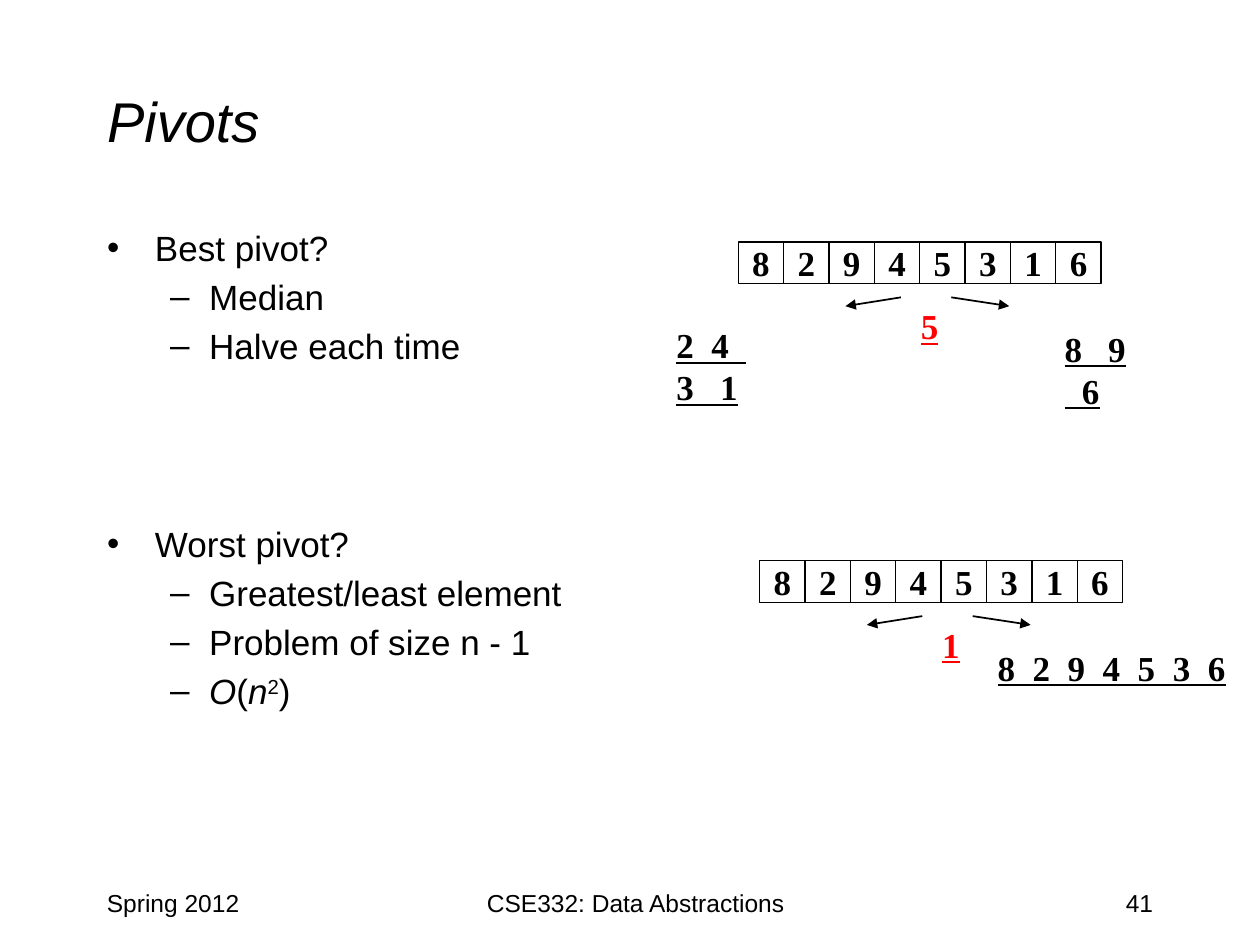
from lxml.etree import SubElement
from pptx import Presentation
from pptx.dml.color import RGBColor
from pptx.enum.shapes import MSO_CONNECTOR as Connector, MSO_SHAPE as Shape
from pptx.enum.text import MSO_ANCHOR as Anchor, MSO_AUTO_SIZE as AutoSize, PP_ALIGN as Align
from pptx.oxml.ns import qn
from pptx.util import Inches, Pt

COLORS = {"ink": "000000", "pivot": "FF0000"}
BODY = {"name": "Arial", "size": Pt(20)}
DIGITS = {"name": "Times New Roman", "size": Pt(20), "bold": True}
UNDERLINED = {**DIGITS, "underline": True}
FOOTER = {"name": "Arial", "size": Pt(14)}
VALUES = "82945316"
CELL_WIDTH, CELL_HEIGHT = 0.36, 0.33
INDENTS = [(0.38, -0.38), (0.81, -0.31)]
OUTLINE = [
    (0, "Best pivot?"),
    (1, "Median"),
    (1, "Halve each time"),
    (0, "Worst pivot?"),
    (1, "Greatest/least element"),
    (1, "Problem of size n - 1"),
]
COMPLEXITY = [("O", True, 0), ("(", False, 0), ("n", True, 0), ("2", False, 30000), (")", False, 0)]


def color(name):
    """Return a named colour of the palette."""
    return RGBColor.from_string(COLORS[name])


def place(shape, left, top, width, height):
    """Move and size a shape, in inches."""
    bounds = {"left": left, "top": top, "width": width, "height": height}
    for name, value in bounds.items():
        setattr(shape, name, Inches(value))


def add_span(para, text, style, ink="ink"):
    """Append a formatted run to a paragraph."""
    span = para.add_run()
    span.text = text
    for name, value in style.items():
        setattr(span.font, name, value)
    span.font.color.rgb = color(ink)
    return span


def add_text(page, bounds, text, style, ink="ink", align=Align.LEFT):
    """Add a wrapping text box with one paragraph."""
    box = page.shapes.add_textbox(*map(Inches, bounds))
    box.text_frame.word_wrap = True
    para = box.text_frame.paragraphs[0]
    para.alignment = align
    add_span(para, text, style, ink)


def add_title(page, text):
    """Fill the title placeholder."""
    title = page.shapes.title
    place(title, 0.75, 0.33, 8.5, 1.25)
    title.text_frame.vertical_anchor = Anchor.MIDDLE
    title.text_frame.auto_size = AutoSize.NONE
    para = title.text_frame.paragraphs[0]
    para.alignment = Align.LEFT
    add_span(para, text, {"name": "Arial", "size": Pt(32), "italic": True})


def add_point(frame, level):
    """Start an indented bullet paragraph."""
    first = frame.paragraphs[0]
    para = frame.add_paragraph() if first.runs else first
    para.level = level
    margin, indent = INDENTS[level]
    properties = para._p.get_or_add_pPr()
    properties.set("marL", str(Inches(margin)))
    properties.set("indent", str(Inches(indent)))
    SubElement(properties, qn("a:buChar")).set("char", "•–"[level])
    return para


def add_outline(page):
    """Fill the body placeholder with the two pivot cases."""
    body = page.placeholders[1]
    place(body, 0.75, 1.75, 8.5, 4.92)
    frame = body.text_frame
    frame.auto_size = AutoSize.NONE
    for level, text in OUTLINE:
        para = add_point(frame, level)
        add_span(para, text, BODY)
        if text.startswith("Worst"):
            para.space_before = Pt(89)
    para = add_point(frame, 1)
    for text, italic, baseline in COMPLEXITY:
        span = add_span(para, text, {**BODY, "italic": italic})
        if baseline:
            span.font._element.set("baseline", str(baseline))


def add_cell(page, left, top, value):
    """Add one outlined array cell."""
    cell = page.shapes.add_shape(Shape.RECTANGLE, *map(Inches, (left, top, CELL_WIDTH, CELL_HEIGHT)))
    cell.shadow.inherit = False
    cell.fill.background()
    cell.line.color.rgb = color("ink")
    cell.line.width = Pt(0.75)
    frame = cell.text_frame
    frame.word_wrap = False
    frame.vertical_anchor = Anchor.MIDDLE
    para = frame.paragraphs[0]
    para.alignment = Align.CENTER
    add_span(para, value, DIGITS)


def add_arrow(page, *ends):
    """Add a thin line with an arrowhead at its end."""
    arrow = page.shapes.add_connector(Connector.STRAIGHT, *map(Inches, ends))
    arrow.line.color.rgb = color("ink")
    arrow.line.width = Pt(1)
    SubElement(arrow.line._get_or_add_ln(), qn("a:tailEnd")).set("type", "triangle")
    SubElement(arrow._element.spPr, qn("a:effectLst"))


def add_partition(page, left, top, pivot):
    """Add the array, its pivot and the arrows to both halves."""
    for index, value in enumerate(VALUES):
        add_cell(page, left + index * CELL_WIDTH, top, value)
    for start, end in [(1.29, 0.85), (1.69, 2.15)]:
        add_arrow(page, left + start, top + 0.44, left + end, top + 0.51)
    add_text(page, (left + 1.35, top + 0.45, 0.4, 0.44), pivot, UNDERLINED, "pivot")


def main():
    """Build the slide and save it."""
    deck = Presentation()
    deck.slide_width, deck.slide_height = Inches(10), Inches(7.5)
    page = deck.slides.add_slide(deck.slide_layouts[1])
    add_title(page, "Pivots")
    add_outline(page)
    add_partition(page, 5.86, 1.92, "5")
    add_partition(page, 6.03, 4.45, "1")
    add_text(page, (5.27, 2.52, 0.95, 0.34), "2  4   3   1", UNDERLINED)
    add_text(page, (8.35, 2.55, 0.75, 0.34), "8   9   6", UNDERLINED)
    add_text(page, (7.82, 5.08, 2.1, 0.44), "8  2  9  4  5  3  6", UNDERLINED)
    add_text(page, (0.75, 7, 2.08, 0.5), "Spring 2012", FOOTER)
    add_text(page, (3.17, 7, 3.75, 0.5), "CSE332: Data Abstractions", FOOTER, align=Align.CENTER)
    add_text(page, (7.17, 7, 2.08, 0.5), "41", FOOTER, align=Align.RIGHT)
    deck.save("out.pptx")


if __name__ == "__main__":
    main()
